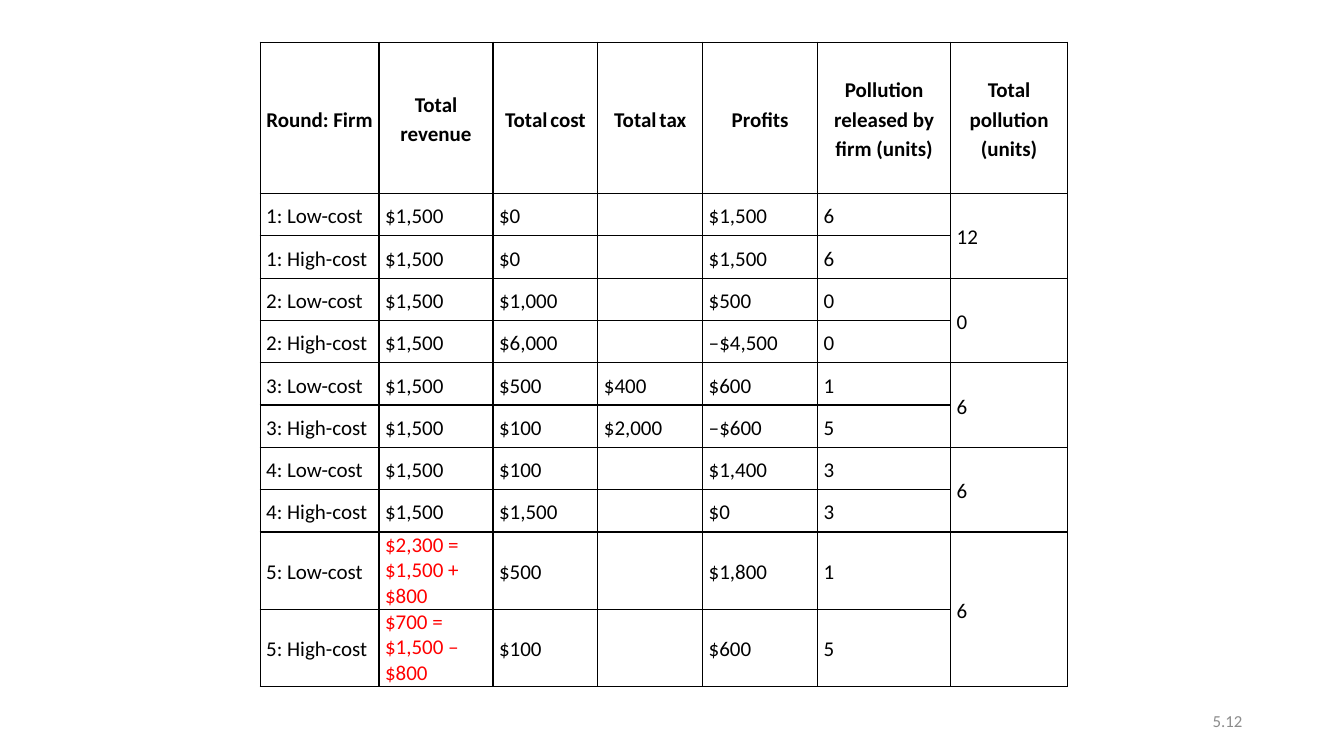
from lxml.etree import SubElement
from pptx import Presentation
from pptx.dml.color import RGBColor
from pptx.enum.text import MSO_ANCHOR as Anchor, PP_ALIGN as Align
from pptx.oxml.ns import qn
from pptx.util import Inches, Pt

COLORS = {"ink": "000000", "change": "FF0000", "number": "8C8C8C", "paper": "FFFFFF"}
FONT = "Calibri"
SLIDE_WIDTH, SLIDE_HEIGHT = 13.33, 7.5
TABLE_LEFT, TABLE_TOP = 2.58, 0.42
COLUMN_WIDTHS = [1.18, 1.13, 1.04, 1.04, 1.14, 1.32, 1.16]
ROW_HEIGHTS = [1.5] + [0.42] * 8 + [0.71] * 2
TOTAL_COLUMN = len(COLUMN_WIDTHS) - 1

HEADINGS = ["Round: Firm", "Total revenue", "Total cost", "Total tax", "Profits",
            "Pollution released by firm (units)", "Total pollution (units)"]
NARROW_SPACED = HEADINGS[1:4]
# Each round: total pollution, then the low-cost and the high-cost firm
# as revenue, cost, tax, profits and pollution released.
ROUNDS = [
    ("12", ["$1,500", "$0", "", "$1,500", "6"], ["$1,500", "$0", "", "$1,500", "6"]),
    ("0", ["$1,500", "$1,000", "", "$500", "0"], ["$1,500", "$6,000", "", "‒$4,500", "0"]),
    ("6", ["$1,500", "$500", "$400", "$600", "1"], ["$1,500", "$100", "$2,000", "‒$600", "5"]),
    ("6", ["$1,500", "$100", "", "$1,400", "3"], ["$1,500", "$1,500", "", "$0", "3"]),
    ("6", ["$2,300 =\n$1,500 + $800", "$500", "", "$1,800", "1"],
     ["$700 =\n$1,500 ‒ $800", "$100", "", "$600", "5"]),
]


def style_paragraph(paragraph, size, color, align=Align.LEFT, bold=False):
    paragraph.alignment = align
    font = paragraph.font
    font.name, font.size, font.bold = FONT, Pt(size), bold
    font.color.rgb = RGBColor.from_string(COLORS[color])


def draw_borders(cell):
    properties = cell._tc.get_or_add_tcPr()
    for position, side in enumerate(("lnL", "lnR", "lnT", "lnB")):
        line = SubElement(properties, qn(f"a:{side}"), w=str(Pt(1)))
        fill = SubElement(line, qn("a:solidFill"))
        SubElement(fill, qn("a:srgbClr"), val=COLORS["ink"])
        properties.insert(position, line)


def prepare_cell(cell):
    cell.fill.solid()
    cell.fill.fore_color.rgb = RGBColor.from_string(COLORS["paper"])
    cell.vertical_anchor = Anchor.MIDDLE
    cell.margin_left = cell.margin_right = Inches(0.06)
    cell.margin_top = cell.margin_bottom = 0
    draw_borders(cell)


def space_out(paragraph):
    paragraph.line_spacing = 1.15
    paragraph.space_after = Pt(10)


def write_heading(cell, heading):
    paragraph = cell.text_frame.paragraphs[0]
    style_paragraph(paragraph, 15, "ink", Align.CENTER, bold=True)
    space_out(paragraph)
    if heading in NARROW_SPACED:
        first, last = heading.split()
        for word in (first, " ", last):
            run = paragraph.add_run()
            run.text = word
            if word == " ":
                run.font.size = Pt(9)
    else:
        paragraph.add_run().text = heading


def write_value(cell, value):
    """Write a value; a two-line calculation is set tight and in red."""
    cell.text = value
    calculation = "\n" in value
    for paragraph in cell.text_frame.paragraphs:
        style_paragraph(paragraph, 15, "change" if calculation else "ink")
        if not calculation:
            space_out(paragraph)


def add_results_table(slide):
    table = slide.shapes.add_table(
        len(ROW_HEIGHTS), len(COLUMN_WIDTHS), Inches(TABLE_LEFT), Inches(TABLE_TOP),
        Inches(sum(COLUMN_WIDTHS)), Inches(sum(ROW_HEIGHTS))).table
    table.first_row = table.horz_banding = False
    for column, width in zip(table.columns, COLUMN_WIDTHS):
        column.width = Inches(width)
    for row, height in zip(table.rows, ROW_HEIGHTS):
        row.height = Inches(height)
    for cell in table.iter_cells():
        prepare_cell(cell)

    for column, heading in enumerate(HEADINGS):
        write_heading(table.cell(0, column), heading)
    for index, (total, *firms) in enumerate(ROUNDS):
        top = 1 + 2 * index
        for offset, (firm, values) in enumerate(zip(("Low", "High"), firms)):
            for column, value in enumerate([f"{index + 1}: {firm}-cost", *values]):
                write_value(table.cell(top + offset, column), value)
        total_cell = table.cell(top, TOTAL_COLUMN)
        total_cell.merge(table.cell(top + 1, TOTAL_COLUMN))
        write_value(total_cell, total)


def add_page_number(slide, number):
    box = slide.shapes.add_textbox(Inches(9.42), Inches(6.95), Inches(3), Inches(0.4))
    frame = box.text_frame
    frame.word_wrap = True
    frame.vertical_anchor = Anchor.MIDDLE
    frame.text = number
    style_paragraph(frame.paragraphs[0], 12, "number", Align.RIGHT)


def main():
    deck = Presentation()
    deck.slide_width, deck.slide_height = Inches(SLIDE_WIDTH), Inches(SLIDE_HEIGHT)
    slide = deck.slides.add_slide(deck.slide_layouts[6])
    add_results_table(slide)
    add_page_number(slide, "5.12")
    deck.save("out.pptx")


if __name__ == "__main__":
    main()
